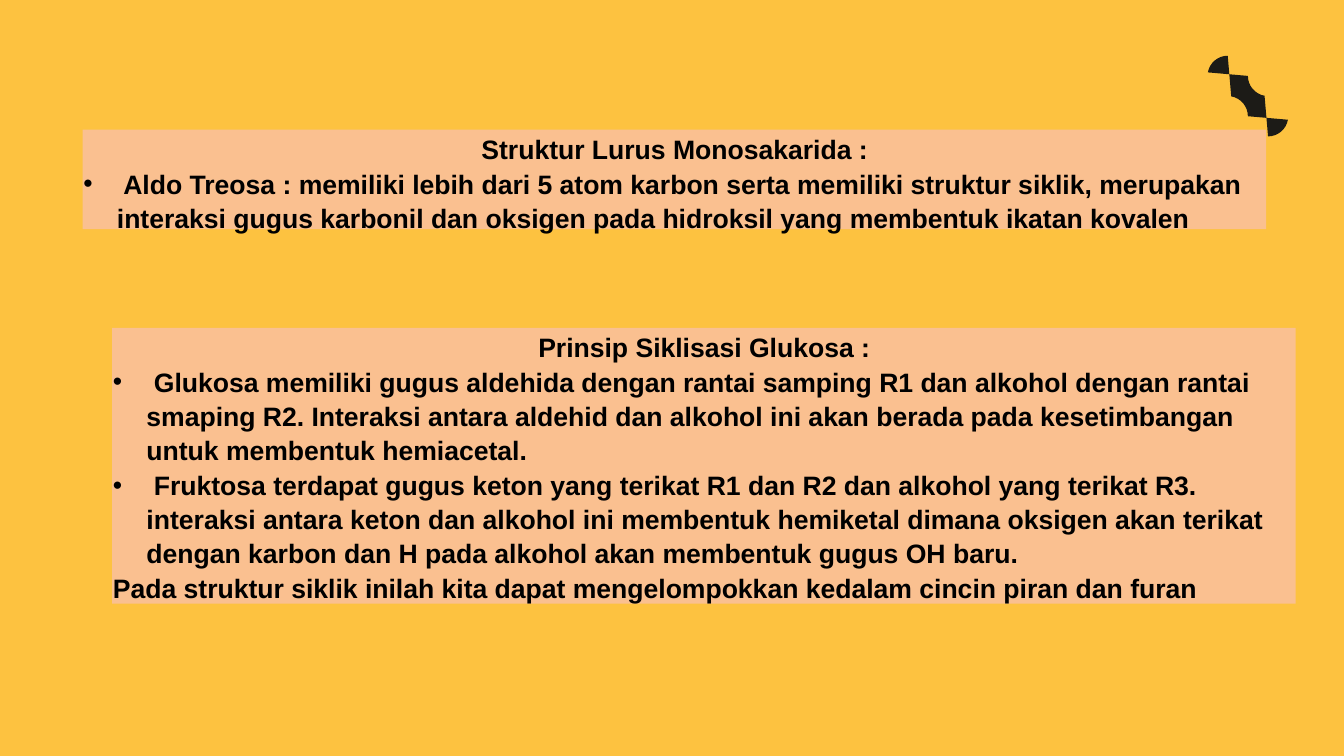
from dataclasses import dataclass
from math import cos, pi, sin

from lxml import etree
from pptx import Presentation, util as u
from pptx.dml.color import RGBColor
from pptx.enum import text as t
from pptx.oxml import ns

YELLOW = RGBColor(0xFD, 0xC2, 0x40)
PEACH = RGBColor(0xFA, 0xC0, 0x90)
INK = RGBColor(0x1C, 0x1B, 0x17)
BLACK = RGBColor(0, 0, 0)

WIDE, HIGH = u.Inches(20), u.Inches(11.25)
COL, ROW = WIDE / 20, HIGH / 11.25

FONT = {"name": "Arial", "size": u.Pt(28.5), "bold": True}
FRAME = {
    "margin_left": 0, "margin_right": 0, "margin_bottom": 0,
    "margin_top": u.Inches(0.01), "word_wrap": True,
    "vertical_anchor": t.MSO_ANCHOR.TOP,
    "auto_size": t.MSO_AUTO_SIZE.SHAPE_TO_FIT_TEXT,
}


@dataclass
class Line:
    text: str
    align: t.PP_ALIGN = t.PP_ALIGN.LEFT
    bullet: bool = False


@dataclass
class Panel:
    col: float
    row: float
    rows: float
    lines: list[Line]
    cols: float = 17.61


PANELS = [
    Panel(1.23, 1.93, 1.58, [
        Line("Struktur Lurus Monosakarida :", t.PP_ALIGN.CENTER),
        Line(" Aldo Treosa : memiliki lebih dari 5 atom karbon serta memiliki "
             "struktur siklik, merupakan interaksi gugus karbonil dan oksigen "
             "pada hidroksil yang membentuk ikatan kovalen", bullet=True),
    ]),
    Panel(1.67, 4.88, 4.2, [
        Line("Prinsip Siklisasi Glukosa :", t.PP_ALIGN.CENTER),
        Line(" Glukosa memiliki gugus aldehida dengan rantai samping R1 dan "
             "alkohol dengan rantai smaping R2. Interaksi antara aldehid dan "
             "alkohol ini akan berada pada kesetimbangan untuk membentuk "
             "hemiacetal.", bullet=True),
        Line(" Fruktosa terdapat gugus keton yang terikat R1 dan R2 dan "
             "alkohol yang terikat R3. interaksi antara keton dan alkohol ini "
             "membentuk hemiketal dimana oksigen akan terikat dengan karbon "
             "dan H pada alkohol akan membentuk gugus OH baru.", bullet=True),
        Line("Pada struktur siklik inilah kita dapat mengelompokkan kedalam "
             "cincin piran dan furan"),
    ]),
]


def apply(item, form: dict) -> None:
    for key, val in form.items():
        setattr(item, key, val)


def write(para, line: Line, first: bool) -> None:
    props = para._p.get_or_add_pPr()
    left, hang = (0.51, -0.5) if line.bullet else (0.01, 0)
    props.set("marL", str(u.Inches(left)))
    props.set("indent", str(u.Inches(hang)))
    if line.bullet:
        etree.SubElement(props, ns.qn("a:buFont")).set("typeface", "Arial")
        etree.SubElement(props, ns.qn("a:buChar")).set("char", "•")
    else:
        etree.SubElement(props, ns.qn("a:buNone"))
    apply(para, {"alignment": line.align, "line_spacing": 1.07,
                 "space_before": u.Pt(0 if first else 0.9),
                 "space_after": u.Pt(0)})
    run = para.add_run()
    run.text = line.text
    apply(run.font, FONT)
    run.font.color.rgb = BLACK


def fill_panel(shape, panel: Panel) -> None:
    apply(shape, {"left": round(panel.col * COL), "top": round(panel.row * ROW),
                  "width": round(panel.cols * COL),
                  "height": round(panel.rows * ROW)})
    shape.fill.solid()
    shape.fill.fore_color.rgb = PEACH
    frame = shape.text_frame
    apply(frame, FRAME)
    for i, line in enumerate(panel.lines):
        para = frame.add_paragraph() if i else frame.paragraphs[0]
        write(para, line, i == 0)


def draw_star(slide, col: float, row: float, size: float) -> None:
    mid_x, mid_y, rad = col * COL, row * ROW, size * COL
    steps = 9
    dots = []
    for k, (sx, sy) in enumerate([(-1, 1), (-1, -1), (1, -1), (1, 1)]):
        for i in range(steps):
            turn = (k - 1) * -pi / 2 - pi / 2 - i * pi / 2 / steps
            dots.append((round(mid_x + rad * (sx + cos(turn))),
                         round(mid_y + rad * (sy + sin(turn)))))
    path = slide.shapes.build_freeform(*dots[0])
    path.add_line_segments(dots[1:], close=True)
    star = path.convert_to_shape()
    star.shadow.inherit = False
    star.fill.solid()
    star.fill.fore_color.rgb = INK
    star.line.fill.background()


def main() -> None:
    deck = Presentation()
    apply(deck, {"slide_width": WIDE, "slide_height": HIGH})
    slide = deck.slides.add_slide(deck.slide_layouts.get_by_name("Two Content"))
    back = slide.background.fill
    back.solid()
    back.fore_color.rgb = YELLOW
    head, *bodies = slide.placeholders
    head.element.getparent().remove(head.element)
    for body, panel in zip(bodies, PANELS):
        fill_panel(body, panel)
    draw_star(slide, 18.57, 1.43, 0.3)
    deck.save("out.pptx")


if __name__ == "__main__":
    main()
